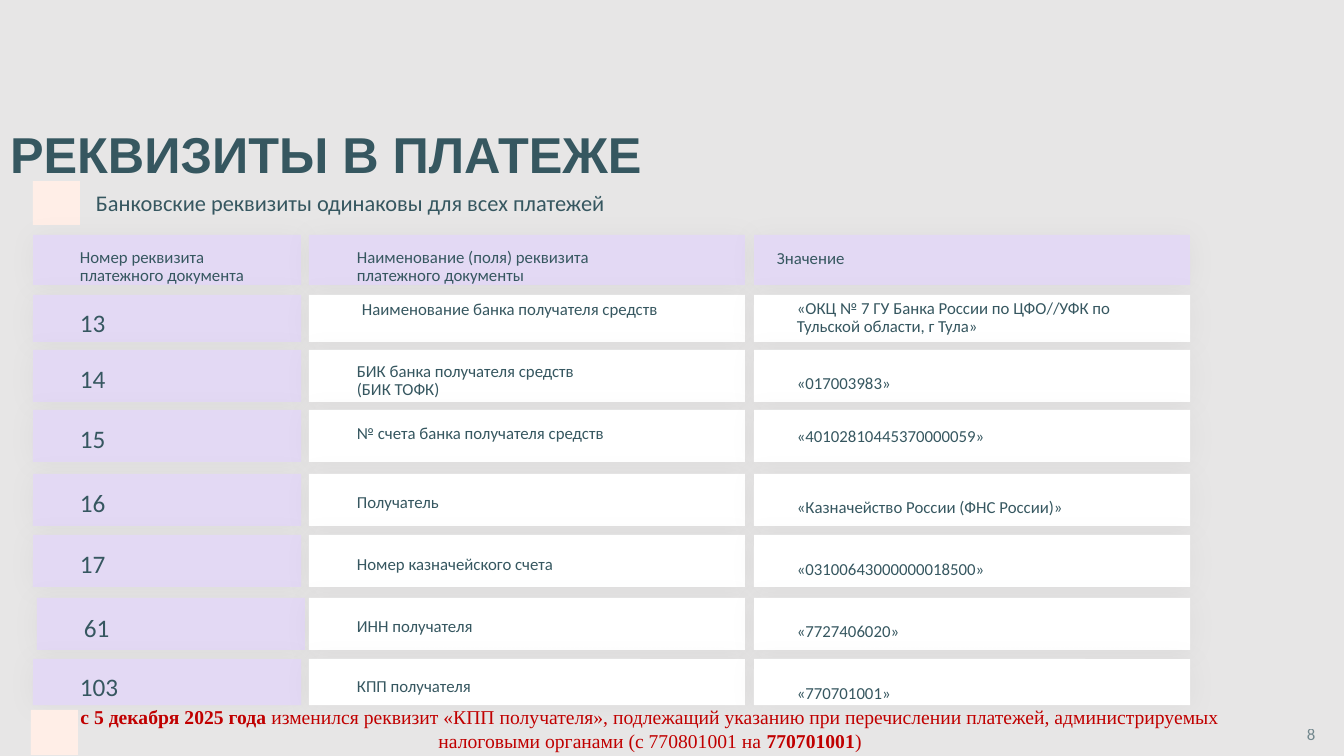
from lxml import etree
from pptx import Presentation
from pptx.dml.color import RGBColor
from pptx.enum.shapes import MSO_SHAPE as SHAPE
from pptx.enum.text import MSO_ANCHOR as ANCHOR, PP_ALIGN as ALIGN
from pptx.oxml import parse_xml
from pptx.oxml.ns import nsdecls, qn
from pptx.util import Pt

# Content
TITLE = "РЕКВИЗИТЫ В ПЛАТЕЖЕ"
SUBTITLE = "Банковские реквизиты одинаковы для всех платежей"
PAGE = "8"
NOTE = [  # text, bold
    ("с 5 декабря 2025 года ", True),
    ("изменился реквизит «КПП получателя», подлежащий указанию при перечислении "
     "платежей, администрируемых налоговыми органами (с 770801001 на ", False),
    ("770701001", True),
    (")", False),
]
# Row: top, height, then number, name and value, each as (text, text top)
ROWS = [
    (235, 50, ("Номер реквизита платежного документа", 244),
     ("Наименование (поля) реквизита платежного документы", 244), ("Значение", 245)),
    (295, 47, ("13", 306), ("Наименование банка получателя средств", 296),
     ("«ОКЦ № 7 ГУ Банка России по ЦФО//УФК по Тульской области, г Тула»", 295)),
    (350, 52, ("14", 362), ("БИК банка получателя средств \n(БИК ТОФК)", 358),
     ("«017003983»", 370)),
    (410, 52, ("15", 422), ("№ счета банка получателя средств", 420),
     ("«40102810445370000059»", 423)),
    (474, 52, ("16", 486), ("Получатель", 489),
     ("«Казначейство России (ФНС России)»", 494)),
    (535, 52, ("17", 547), ("Номер казначейского счета", 551),
     ("«03100643000000018500»", 556)),
    (598, 52, ("61", 611), ("ИНН получателя", 613), ("«7727406020»", 618)),
    (659, 46, ("103", 670), ("КПП получателя", 673), ("«770701001»", 680)),
]
# Column: card left, card width, text left, text width
COLUMNS = [(33, 268, 70, 226), (309, 436, 347, 338), (754, 436, 787, 380)]
CARD_SHIFT = {(6, 0): 4}                            # (row, column): px
TEXT_SHIFT = {(0, 2): -20, (1, 1): 5, (6, 0): 4}

BACK = RGBColor(0xE7, 0xE6, 0xE6)
TEAL = RGBColor(0x36, 0x57, 0x60)
LILAC = RGBColor(0xE3, 0xD9, 0xF4)
PEACH = RGBColor(0xFF, 0xEE, 0xE7)
WHITE = RGBColor(0xFF, 0xFF, 0xFF)
RED = RGBColor(0xC0, 0x00, 0x00)

SHADOW = f"""<a:effectLst {nsdecls("a")}>
  <a:outerShdw blurRad="254000" dist="12700" dir="5400000" algn="ctr" rotWithShape="0">
    <a:srgbClr val="000000"><a:alpha val="4000"/></a:srgbClr>
  </a:outerShdw></a:effectLst>"""


def px(n):
    return round(n * 914400 / 100.8)


def add_run(p, text, size, color=TEAL, font="Calibri", bold=False):
    r = p.add_run()
    r.text = text
    r.font.name, r.font.size, r.font.bold = font, Pt(size), bold
    r.font.color.rgb = color
    return r


def add_box(x, y, w, h):
    tf = slide.shapes.add_textbox(px(x), px(y), px(w), px(h)).text_frame
    tf.word_wrap = True
    return tf.paragraphs[0]


def add_label(x, y, w, h, text, size):
    p = add_box(x, y, w, h)
    p.line_spacing = 0.9
    for i, line in enumerate(text.split("\n")):
        if i:
            p.add_line_break()
        add_run(p, line, size)


def add_block(kind, x, y, w, h, color):
    sp = slide.shapes.add_shape(kind, px(x), px(y), px(w), px(h))
    sp.fill.solid()
    sp.fill.fore_color.rgb = color
    sp.line.fill.background()
    sp.shadow.inherit = False
    return sp


def add_card(x, y, w, h, color):
    sp = add_block(SHAPE.ROUNDED_RECTANGLE, x, y, w, h, color)
    sp.adjustments[0] = 0.005
    old = sp._element.spPr.find(qn("a:effectLst"))
    old.getparent().replace(old, parse_xml(SHADOW))


prs = Presentation()
prs.slide_width, prs.slide_height = px(1344), px(756)
slide = prs.slides.add_slide(prs.slide_layouts[5])
slide.background.fill.solid()
slide.background.fill.fore_color.rgb = BACK

# Title
title = slide.shapes.title
title.left, title.top, title.width, title.height = px(0), px(124), px(1252), px(66)
title.text_frame.vertical_anchor = ANCHOR.MIDDLE
p = title.text_frame.paragraphs[0]
p.alignment, p.line_spacing = ALIGN.LEFT, 0.9
add_run(p, TITLE, 36, font="Arial", bold=True)

# Subtitle with its marker
add_block(SHAPE.RECTANGLE, 33, 181, 47, 44, PEACH)
add_label(86, 187, 632, 34, SUBTITLE, 16)

# Grid of cards
for i, (top, height, *cells) in enumerate(ROWS):
    for j, (text, text_top) in enumerate(cells):
        left, width, text_left, text_width = COLUMNS[j]
        is_head = i == 0
        add_card(left + CARD_SHIFT.get((i, j), 0), top, width, height,
                 LILAC if is_head or j == 0 else WHITE)
        add_label(text_left + TEXT_SHIFT.get((i, j), 0), text_top, text_width, 28,
                  text, 18 if j == 0 and not is_head else 12)

# Page number
r = add_run(add_box(1297, 719, 35, 30), PAGE, 12)
clr = r._r.rPr.find(".//" + qn("a:srgbClr"))
etree.SubElement(clr, qn("a:alpha")).set("val", "65000")

# Note with its marker
p = add_box(69, 700, 1162, 57)
p.alignment = ALIGN.CENTER
for text, bold in NOTE:
    add_run(p, text, 14, RED, "Times New Roman", bold)
add_block(SHAPE.RECTANGLE, 31, 710, 47, 45, PEACH)

prs.save("out.pptx")
